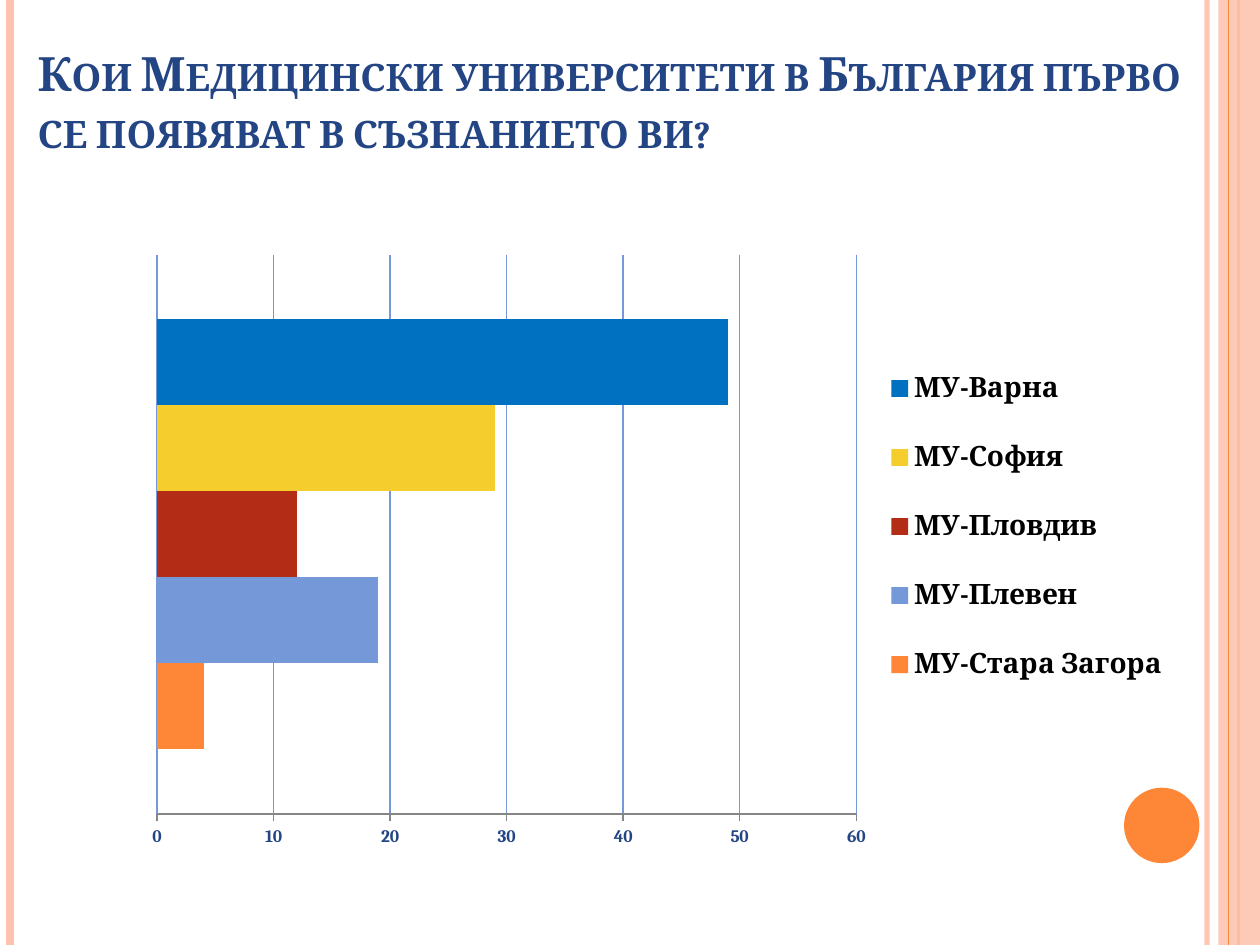
from lxml.etree import SubElement
from pptx import Presentation
from pptx.chart.data import CategoryChartData
from pptx.dml.color import RGBColor
from pptx.enum.chart import XL_CHART_TYPE, XL_LEGEND_POSITION, XL_TICK_MARK
from pptx.enum.shapes import MSO_CONNECTOR, MSO_SHAPE
from pptx.enum.text import MSO_ANCHOR
from pptx.oxml import parse_xml
from pptx.oxml.ns import nsdecls, qn
from pptx.util import Cm, Pt

TITLE = "Кои Медицински университети в България първо се появяват в съзнанието ви?"
FONT = "Cambria"
COLORS = {
    "peach": "FEC3AE", "orange": "FE8637", "navy": "244583", "periwinkle": "7598D9",
    "red": "B32C16", "yellow": "F5CD2D", "blue": "0070C0", "gray": "868686",
    "black": "000000",
}
UNIVERSITIES = [
    ("МУ-Стара Загора", 4, "orange"),
    ("МУ-Плевен", 19, "periwinkle"),
    ("МУ-Пловдив", 12, "red"),
    ("МУ-София", 29, "yellow"),
    ("МУ-Варна", 49, "blue"),
]
# x in cm, color, width in points, opacity in percent
STRIPES_BEHIND_BAND = [
    (24.33, "peach", 3, 93),
    (0.2, "peach", 4.5, 100),
    (24.97, "orange", 1.5, 100),
]
STRIPE_ON_BAND = (24.77, "orange", 0.75, 100)
BAND_LEFT, BAND_OPACITY = 24.56, 87
SLIDE_WIDTH, SLIDE_HEIGHT = 25.4, 19.05
# x, y, width, height as fractions of the chart
PLOT_LAYOUT = (0.075, 0.06, 0.635, 0.833)
LEGEND_LAYOUT = (0.73, 0.18, 0.27, 0.57)


def color(name):
    return RGBColor.from_string(COLORS[name])


def set_opacity(properties, percent):
    """Make the solid color inside a shape's or line's properties see-through."""
    for color_element in properties.iter(qn("a:srgbClr")):
        SubElement(color_element, qn("a:alpha")).set("val", str(percent * 1000))


def style_font(font, size, color_name, bold=True):
    font.name = FONT
    font.size = Pt(size)
    font.bold = bold
    font.color.rgb = color(color_name)


def manual_layout(fractions, inner=False):
    target = '<c:layoutTarget val="inner"/>' if inner else ""
    modes = "".join(f'<c:{axis}Mode val="edge"/>' for axis in "xy")
    values = "".join(f'<c:{key} val="{value}"/>' for key, value in zip("xywh", fractions))
    return parse_xml(
        f'<c:layout {nsdecls("c")}><c:manualLayout>{target}{modes}{values}'
        "</c:manualLayout></c:layout>"
    )


def add_stripe(slide, x, color_name, width, opacity):
    stripe = slide.shapes.add_connector(
        MSO_CONNECTOR.STRAIGHT, Cm(x), Cm(0), Cm(x), Cm(SLIDE_HEIGHT)
    )
    stripe.line.color.rgb = color(color_name)
    stripe.line.width = Pt(width)
    properties = stripe._element.spPr
    if opacity < 100:
        set_opacity(properties, opacity)
    SubElement(properties, qn("a:effectLst"))


def add_plain_shape(slide, kind, left, top, width, height, color_name):
    shape = slide.shapes.add_shape(kind, Cm(left), Cm(top), Cm(width), Cm(height))
    shape.shadow.inherit = False
    shape.fill.solid()
    shape.fill.fore_color.rgb = color(color_name)
    shape.line.fill.background()
    return shape


def add_decoration(slide):
    for stripe in STRIPES_BEHIND_BAND:
        add_stripe(slide, *stripe)
    band = add_plain_shape(
        slide, MSO_SHAPE.RECTANGLE, BAND_LEFT, 0, SLIDE_WIDTH - BAND_LEFT, SLIDE_HEIGHT, "peach"
    )
    set_opacity(band._element.spPr, BAND_OPACITY)
    add_stripe(slide, *STRIPE_ON_BAND)
    add_plain_shape(slide, MSO_SHAPE.OVAL, 22.66, 15.88, 1.52, 1.52, "orange")


def add_title(slide):
    title = slide.shapes.add_textbox(Cm(0.51), Cm(0.74), Cm(23.8), Cm(2.57))
    frame = title.text_frame
    frame.word_wrap = True
    frame.vertical_anchor = MSO_ANCHOR.BOTTOM
    run = frame.paragraphs[0].add_run()
    run.text = TITLE
    style_font(run.font, 27, "navy")
    run._r.get_or_add_rPr().set("cap", "small")


def add_university_chart(slide):
    data = CategoryChartData()
    data.categories = ["1"]
    for name, value, _ in UNIVERSITIES:
        data.add_series(name, [value])
    chart = slide.shapes.add_chart(
        XL_CHART_TYPE.BAR_CLUSTERED, Cm(1.5), Cm(4.32), Cm(22.2), Cm(13.54), data
    ).chart
    chart.has_title = False
    style_font(chart.font, 10, "black", bold=False)

    plot = chart.plots[0]
    plot.gap_width = 150
    plot.vary_by_categories = False
    for series, (_, _, color_name) in zip(plot.series, UNIVERSITIES):
        series.format.fill.solid()
        series.format.fill.fore_color.rgb = color(color_name)

    chart.category_axis.visible = False
    axis = chart.value_axis
    axis.minimum_scale, axis.maximum_scale, axis.major_unit = 0, 60, 10
    axis.major_tick_mark = XL_TICK_MARK.OUTSIDE
    axis.format.line.color.rgb = color("gray")
    axis.major_gridlines.format.line.color.rgb = color("periwinkle")
    axis.major_gridlines.format.line.width = Pt(0.75)
    style_font(axis.tick_labels.font, 10, "navy")

    chart.has_legend = True
    legend = chart.legend
    legend.position = XL_LEGEND_POSITION.RIGHT
    legend.include_in_layout = False
    style_font(legend.font, 16, "black")

    plot_area = chart._chartSpace.chart.plotArea
    for parent, position, layout in (
        (plot_area, 0, manual_layout(PLOT_LAYOUT, inner=True)),
        (legend._element, 1, manual_layout(LEGEND_LAYOUT)),
    ):
        for previous in parent.findall(qn("c:layout")):
            parent.remove(previous)
        parent.insert(position, layout)


def main():
    presentation = Presentation()
    presentation.slide_width = Cm(SLIDE_WIDTH)
    presentation.slide_height = Cm(SLIDE_HEIGHT)
    slide = presentation.slides.add_slide(presentation.slide_layouts[6])
    add_decoration(slide)
    add_title(slide)
    add_university_chart(slide)
    presentation.save("out.pptx")


if __name__ == "__main__":
    main()
